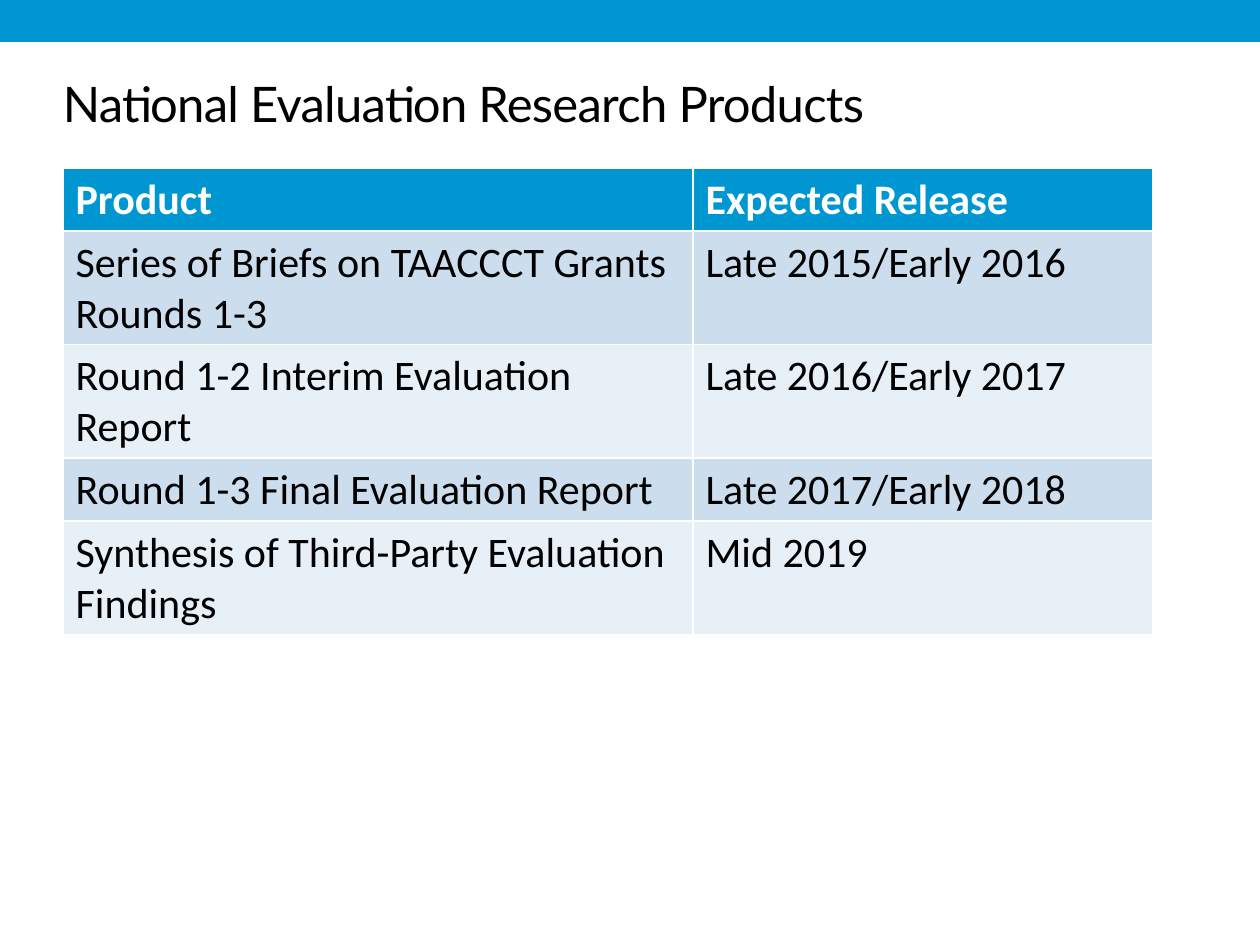
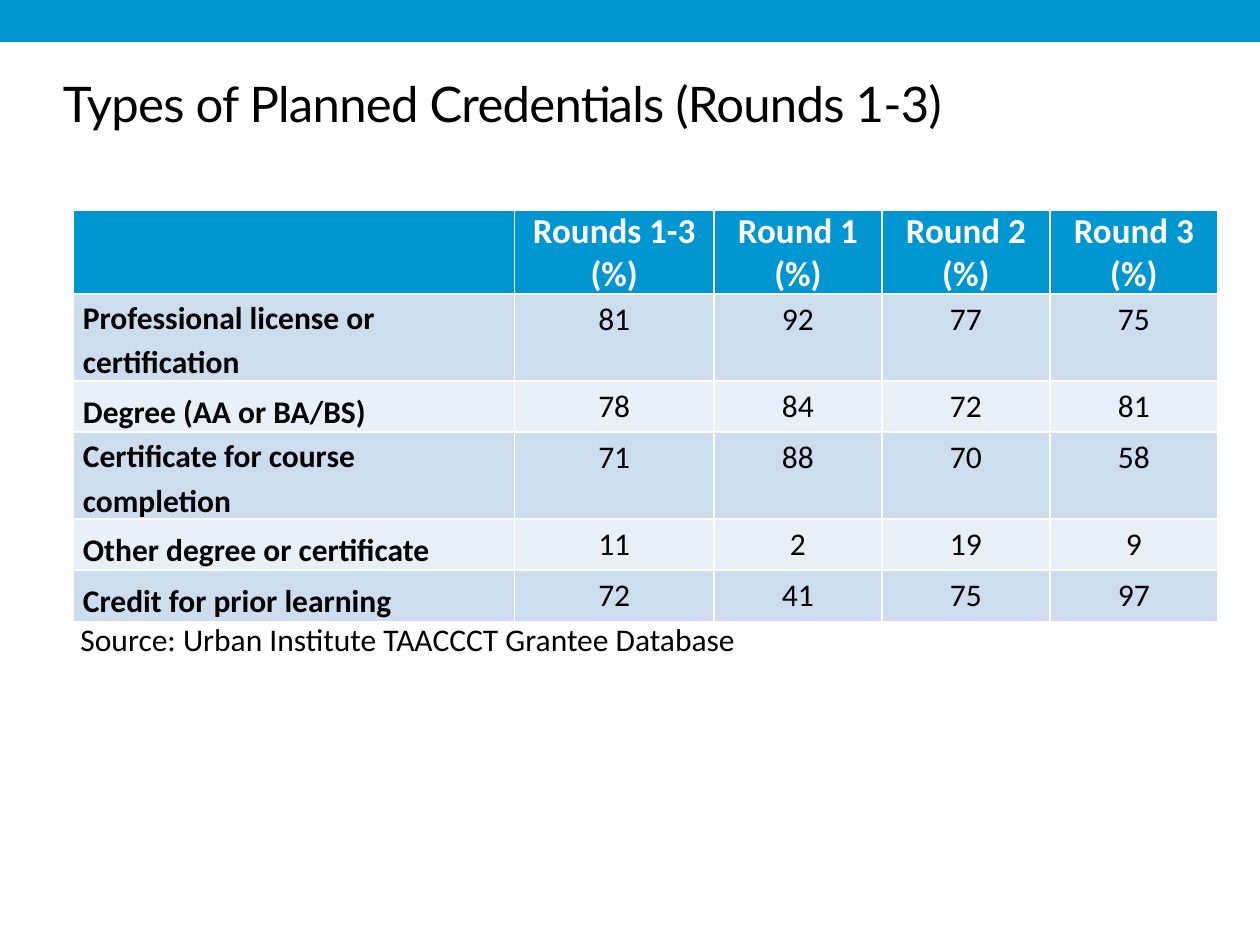
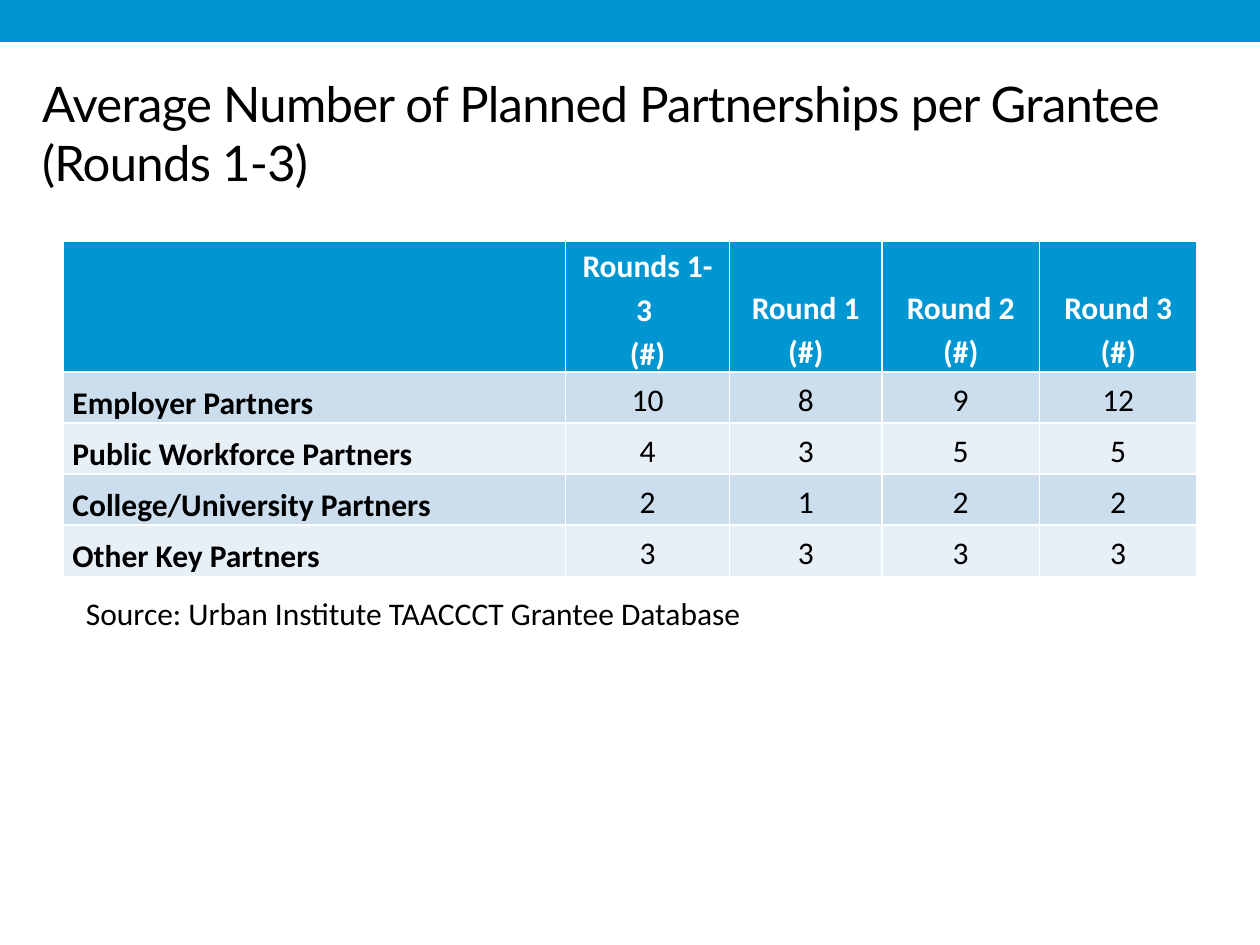
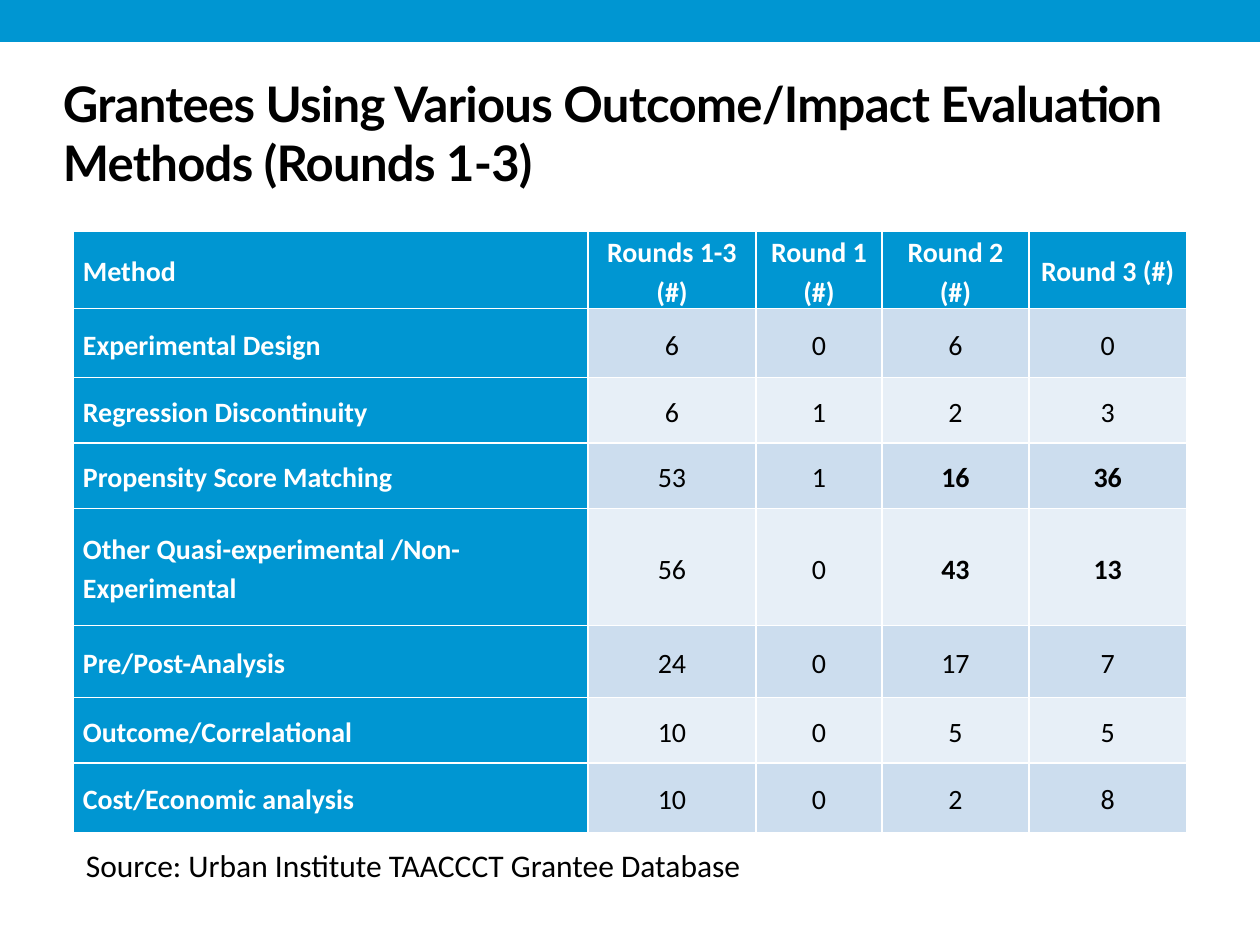
from dataclasses import dataclass, replace

from pptx import Presentation
from pptx.dml.color import RGBColor
from pptx.enum.shapes import MSO_SHAPE
from pptx.enum.text import MSO_ANCHOR, MSO_AUTO_SIZE, PP_ALIGN
from pptx.util import Inches, Pt

BLUE, WHITE, BLACK = "0096D2", "FFFFFF", "000000"
BANDS = ["CCDDEE", "E7EFF7"]
SOURCE = "Source: Urban Institute TAACCCT Grantee Database"
ROW = 29.2 / 72
INSET = 7 / 12


@dataclass(frozen=True)
class Look:
    """How the text of a table cell is set."""
    size: int
    color: str = BLACK
    bold: bool = False
    align: PP_ALIGN = PP_ALIGN.LEFT
    anchor: MSO_ANCHOR = MSO_ANCHOR.TOP
    lines: float | None = None
    tight: bool = False


def rgb(code):
    return RGBColor.from_string(code)


def add_run(para, text, size, color, face="Calibri", bold=False):
    run = para.add_run()
    run.text = text
    font = run.font
    font.size, font.name, font.bold = Pt(size), face, bold
    font.color.rgb = rgb(color)
    return run


def add_box(slide, left, top, width, height):
    box = slide.shapes.add_textbox(Inches(left), Inches(top), Inches(width), Inches(height))
    box.text_frame.word_wrap = True
    return box.text_frame


def add_page(deck, title, left=0.5, bold=False):
    """Add a slide with the blue band and its title, equal margins on both sides."""
    slide = deck.slides.add_slide(deck.slide_layouts[6])
    band = slide.shapes.add_shape(MSO_SHAPE.RECTANGLE, 0, 0, deck.slide_width, Inches(1 / 3))
    band.shadow.inherit = False
    band.fill.solid()
    band.fill.fore_color.rgb = rgb(BLUE)
    band.line.fill.background()

    frame = add_box(slide, left, INSET, 10 - 2 * left, 0.62)
    frame.margin_left = frame.margin_top = frame.margin_right = frame.margin_bottom = 0
    run = add_run(frame.paragraphs[0], title, 28, BLACK, "Lato", bold)
    run.font._element.set("spc", "-40")
    return slide


def add_source(slide, left, top):
    frame = add_box(slide, left, top, 5.92, 0.4)
    frame.auto_size = MSO_AUTO_SIZE.SHAPE_TO_FIT_TEXT
    add_run(frame.paragraphs[0], SOURCE, 18, BLACK)


def fill_cell(cell, text, look, fill):
    cell.fill.solid()
    cell.fill.fore_color.rgb = rgb(fill)
    cell.vertical_anchor = look.anchor
    if not text:
        return
    if look.tight:
        cell.margin_left = cell.margin_right = Pt(5.4)
        cell.margin_top = cell.margin_bottom = 0
    frame = cell.text_frame
    for num, part in enumerate(text.split("\n")):
        para = frame.add_paragraph() if num else frame.paragraphs[0]
        para.alignment = look.align
        para.line_spacing = look.lines
        add_run(para, part, look.size, look.color, bold=look.bold)


def add_grid(slide, left, top, widths, heights, data, head, side, body,
             side_fill=None, strong=()):
    """Add a table with the white rules of the default style.

    head, side and body are the looks of its three parts.
    """
    shape = slide.shapes.add_table(len(data), len(widths), Inches(left), Inches(top),
                                   Inches(sum(widths)), Inches(sum(heights)))
    table = shape.table
    for col, width in zip(table.columns, widths):
        col.width = Inches(width)
    for line, height in zip(table.rows, heights):
        line.height = Inches(height)
    for row, texts in enumerate(data):
        for col, text in enumerate(texts):
            look, fill = body, BANDS[(row - 1) % 2]
            if row == 0:
                look, fill = head, BLUE
            elif col == 0:
                look, fill = side, side_fill or fill
            if row == 0 and col == 0:
                look = replace(head, align=PP_ALIGN.LEFT)
            if (row, col) in strong:
                look = replace(look, bold=True)
            fill_cell(table.cell(row, col), str(text), look, fill)


def add_products(deck):
    slide = add_page(deck, "National Evaluation Research Products")
    data = [
        ("Product", "Expected Release"),
        ("Series of Briefs on TAACCCT Grants Rounds 1-3", "Late 2015/Early 2016"),
        ("Round 1-2 Interim Evaluation Report", "Late 2016/Early 2017"),
        ("Round 1-3 Final Evaluation Report", "Late 2017/Early 2018"),
        ("Synthesis of Third-Party Evaluation Findings", "Mid 2019"),
    ]
    body = Look(24)
    add_grid(slide, 0.5, 4 / 3, [5, 3.65], [ROW] * len(data), data,
             Look(24, WHITE, True), body, body)


def add_types(deck):
    slide = add_page(deck, "Types of Planned Credentials (Rounds 1-3)")
    data = [
        ("", "Rounds 1-3 (%)", "Round 1 (%)", "Round 2 (%)", "Round 3 (%)"),
        ("Professional license or certification", 81, 92, 77, 75),
        ("Degree (AA or BA/BS)", 78, 84, 72, 81),
        ("Certificate for course completion", 71, 88, 70, 58),
        ("Other degree or certificate", 11, 2, 19, 9),
        ("Credit for prior learning", 72, 41, 75, 97),
    ]
    head = Look(20, WHITE, True, PP_ALIGN.CENTER, MSO_ANCHOR.BOTTOM, tight=True)
    side = Look(18, bold=True, anchor=MSO_ANCHOR.BOTTOM, lines=1.15, tight=True)
    add_grid(slide, INSET, 5 / 3, [3.5, 19 / 12] + [4 / 3] * 3, [ROW] * len(data), data,
             head, side, Look(18, align=PP_ALIGN.CENTER))
    add_source(slide, 0.54, 4.87)


def add_partners(deck):
    slide = add_page(deck, "Average Number of Planned Partnerships per Grantee (Rounds 1-3)",
                     left=1 / 3)
    data = [
        ("", "Rounds 1-3 \n(#)", "Round 1 (#)", "Round 2 (#)", "Round 3 (#)"),
        ("Employer Partners", 10, 8, 9, 12),
        ("Public Workforce Partners", 4, 3, 5, 5),
        ("College/University Partners", 2, 1, 2, 2),
        ("Other Key Partners", 3, 3, 3, 3),
    ]
    side = Look(18, bold=True, anchor=MSO_ANCHOR.BOTTOM, lines=1.15, tight=True)
    head = replace(side, color=WHITE, align=PP_ALIGN.CENTER)
    body = replace(side, bold=False, align=PP_ALIGN.CENTER, anchor=MSO_ANCHOR.MIDDLE)
    add_grid(slide, 0.5, 23 / 12, [3.99, 1.3, 1.21, 1.25, 1.25], [ROW] * len(data), data,
             head, side, body)
    add_source(slide, INSET, 14 / 3)


def add_methods(deck):
    slide = add_page(deck, "Grantees Using Various Outcome/Impact Evaluation Methods (Rounds 1-3)",
                     bold=True)
    data = [
        ("Method", "Rounds 1-3 (#)", "Round 1 (#)", "Round 2 (#)", "Round 3 (#)"),
        ("Experimental Design", 6, 0, 6, 0),
        ("Regression Discontinuity", 6, 1, 2, 3),
        ("Propensity Score Matching", 53, 1, 16, 36),
        ("Other Quasi-experimental /Non-Experimental", 56, 0, 43, 13),
        ("Pre/Post-Analysis", 24, 0, 17, 7),
        ("Outcome/Correlational", 10, 0, 5, 5),
        ("Cost/Economic analysis", 10, 0, 2, 8),
    ]
    body = Look(16, align=PP_ALIGN.CENTER, anchor=MSO_ANCHOR.MIDDLE, lines=1.15, tight=True)
    head = replace(body, color=WHITE, bold=True)
    add_grid(slide, INSET, 11 / 6, [49 / 12, 4 / 3, 1, 7 / 6, 1.25],
             [0.52, 0.55, 0.52, 0.52, 0.93, 0.57, 0.52, 0.55], data,
             head, replace(head, align=PP_ALIGN.LEFT), body,
             side_fill=BLUE, strong={(3, 3), (3, 4), (4, 3), (4, 4)})
    add_source(slide, INSET, 20 / 3)


def main():
    deck = Presentation()
    deck.slide_width, deck.slide_height = Inches(10), Inches(7.5)
    add_products(deck)
    add_types(deck)
    add_partners(deck)
    add_methods(deck)
    deck.save("out.pptx")


if __name__ == "__main__":
    main()
